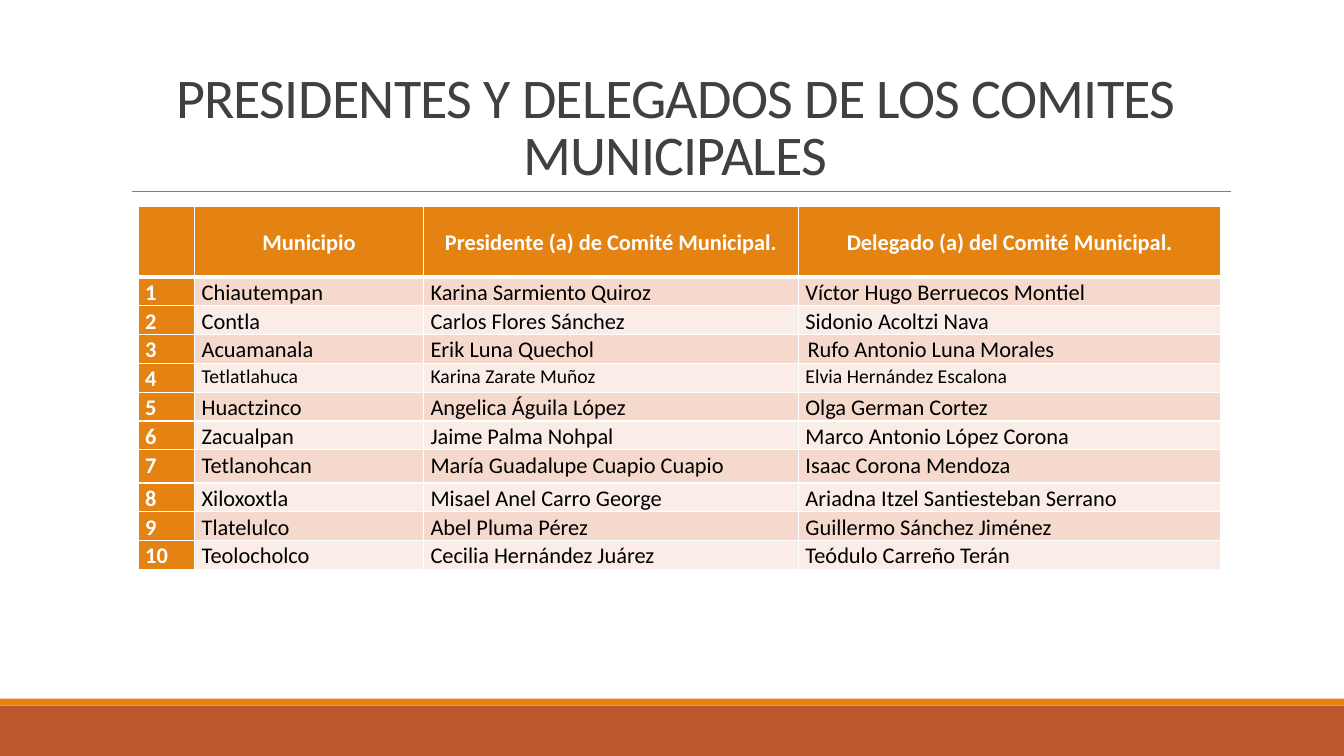
from dataclasses import dataclass

from lxml import etree
from pptx import Presentation
from pptx import util as u
from pptx.dml.color import RGBColor
from pptx.enum import shapes, text
from pptx.oxml.ns import qn

# The page is a grid of 100 columns by 100 rows.
PAGE_WIDTH, PAGE_HEIGHT = u.Inches(13.33), u.Inches(7.5)

WHITE = RGBColor(0xFF, 0xFF, 0xFF)
BLACK = RGBColor(0x00, 0x00, 0x00)
TITLE_GREY = RGBColor(0x40, 0x40, 0x40)
RULE_GREY = RGBColor(0x80, 0x80, 0x80)
ORANGE = RGBColor(0xE4, 0x83, 0x12)
RUST = RGBColor(0xBD, 0x58, 0x2C)
BANDS = (RGBColor(0xF5, 0xD9, 0xCC), RGBColor(0xFA, 0xED, 0xE7))

FONT = "Calibri"
TITLE = "PRESIDENTES Y DELEGADOS DE LOS COMITES MUNICIPALES"
HEADINGS = ("", "Municipio", "Presidente (a) de Comité Municipal.",
            "Delegado (a) del Comité Municipal.")
COLUMN_WIDTHS = (4.2, 17.03, 27.9, 31.43)
HEADING_HEIGHT = 9.33


@dataclass(frozen=True)
class Band:
    top: float
    height: float
    color: RGBColor


@dataclass(frozen=True)
class Committee:
    town: str
    president: str
    delegate: str
    size: int = 16
    height: float = 3.33
    delegate_indent: float = 0


@dataclass(frozen=True)
class CellStyle:
    fill: RGBColor
    color: RGBColor
    bold: bool
    align: text.PP_ALIGN
    anchor: text.MSO_ANCHOR = text.MSO_ANCHOR.TOP
    size: int = 16
    top_border: float = 1
    bottom_border: float = 1


FOOTER = (Band(93.33, 6.67, RUST), Band(92.4, 0.93, ORANGE))
COMMITTEES = (
    Committee("Chiautempan", "Karina Sarmiento Quiroz", "Víctor Hugo Berruecos Montiel"),
    Committee("Contla", "Carlos Flores Sánchez", "Sidonio Acoltzi Nava"),
    Committee("Acuamanala", "Erik Luna Quechol", "Rufo Antonio Luna Morales",
              delegate_indent=0.02),
    Committee("Tetlatlahuca", "Karina Zarate Muñoz", "Elvia Hernández Escalona", size=14),
    Committee("Huactzinco", "Angelica Águila López", "Olga German Cortez"),
    Committee("Zacualpan", "Jaime Palma Nohpal", "Marco Antonio López Corona"),
    Committee("Tetlanohcan", "María Guadalupe Cuapio Cuapio", "Isaac Corona Mendoza",
              height=4.4),
    Committee("Xiloxoxtla", "Misael Anel Carro George", "Ariadna Itzel Santiesteban Serrano"),
    Committee("Tlatelulco", "Abel Pluma Pérez", "Guillermo Sánchez Jiménez"),
    Committee("Teolocholco", "Cecilia Hernández Juárez", "Teódulo Carreño Terán"),
)


def across(columns: float) -> int:
    return round(PAGE_WIDTH * columns / 100)


def down(rows: float) -> int:
    return round(PAGE_HEIGHT * rows / 100)


def draw_band(page, band: Band) -> None:
    shape = page.shapes.add_shape(shapes.MSO_SHAPE.RECTANGLE, 0, down(band.top),
                                  PAGE_WIDTH, down(band.height))
    shape.shadow.inherit = False
    shape.fill.solid()
    shape.fill.fore_color.rgb = band.color
    shape.line.fill.background()


def draw_rule(page) -> None:
    """Draw the thin line under the title."""
    rule = page.shapes.add_connector(shapes.MSO_CONNECTOR.STRAIGHT, across(9.83),
                                     down(25.33), across(91.58), down(25.33))
    rule.line.color.rgb = RULE_GREY
    rule.line.width = u.Pt(0.5)
    etree.SubElement(rule._element.spPr, qn("a:effectLst"))


def draw_title(page) -> None:
    box = page.shapes.add_textbox(across(9), down(4.13), across(82.5), down(21.2))
    frame = box.text_frame
    frame.word_wrap = True
    frame.vertical_anchor = text.MSO_ANCHOR.BOTTOM
    para = frame.paragraphs[0]
    para.alignment = text.PP_ALIGN.CENTER
    para.line_spacing = 0.85
    para.font.name, para.font.size = FONT, u.Pt(40)
    para.font.color.rgb = TITLE_GREY
    span = para.add_run()
    span.text = TITLE
    span.font._element.set("spc", "-50")


def set_borders(cell, style: CellStyle) -> None:
    properties = cell._tc.get_or_add_tcPr()
    widths = {"L": 1, "R": 1, "T": style.top_border, "B": style.bottom_border}
    for position, (side, width) in enumerate(widths.items()):
        line = etree.Element(qn(f"a:ln{side}"), w=str(u.Pt(width)))
        fill = etree.SubElement(line, qn("a:solidFill"))
        etree.SubElement(fill, qn("a:srgbClr"), val=str(WHITE))
        properties.insert(position, line)


def fill_cell(cell, words: str, style: CellStyle, indent: float = 0) -> None:
    cell.fill.solid()
    cell.fill.fore_color.rgb = style.fill
    cell.margin_left = cell.margin_right = u.Inches(0.07)
    cell.margin_top = cell.margin_bottom = 0
    cell.vertical_anchor = style.anchor
    set_borders(cell, style)
    para = cell.text_frame.paragraphs[0]
    para.text = words
    para.alignment = style.align
    para.line_spacing = 1.07
    para.font.name, para.font.size = FONT, u.Pt(style.size)
    para.font.bold = style.bold
    para.font.color.rgb = style.color
    if indent:
        para._p.get_or_add_pPr().set("indent", str(u.Inches(indent)))


def draw_committees(page) -> None:
    heights = [HEADING_HEIGHT] + [committee.height for committee in COMMITTEES]
    table = page.shapes.add_table(len(heights), len(HEADINGS), across(10.28), down(27.33),
                                  across(sum(COLUMN_WIDTHS)), down(sum(heights))).table
    for column, width in zip(table.columns, COLUMN_WIDTHS):
        column.width = across(width)
    for row, height in zip(table.rows, heights):
        row.height = down(height)

    heading = CellStyle(ORANGE, WHITE, True, text.PP_ALIGN.CENTER,
                        text.MSO_ANCHOR.MIDDLE, bottom_border=3)
    for column, words in enumerate(HEADINGS):
        fill_cell(table.cell(0, column), words, heading)

    for number, committee in enumerate(COMMITTEES, start=1):
        top_border = 3 if number == 1 else 1
        label = CellStyle(ORANGE, WHITE, True, text.PP_ALIGN.LEFT, top_border=top_border)
        entry = CellStyle(BANDS[(number - 1) % 2], BLACK, False, text.PP_ALIGN.JUSTIFY,
                          size=committee.size, top_border=top_border)
        fill_cell(table.cell(number, 0), str(number), label)
        fill_cell(table.cell(number, 1), committee.town, entry)
        fill_cell(table.cell(number, 2), committee.president, entry)
        fill_cell(table.cell(number, 3), committee.delegate, entry, committee.delegate_indent)


def main() -> None:
    deck = Presentation()
    deck.slide_width, deck.slide_height = PAGE_WIDTH, PAGE_HEIGHT
    page = deck.slides.add_slide(deck.slide_layouts[6])
    for band in FOOTER:
        draw_band(page, band)
    draw_rule(page)
    draw_title(page)
    draw_committees(page)
    deck.save("out.pptx")


if __name__ == "__main__":
    main()
